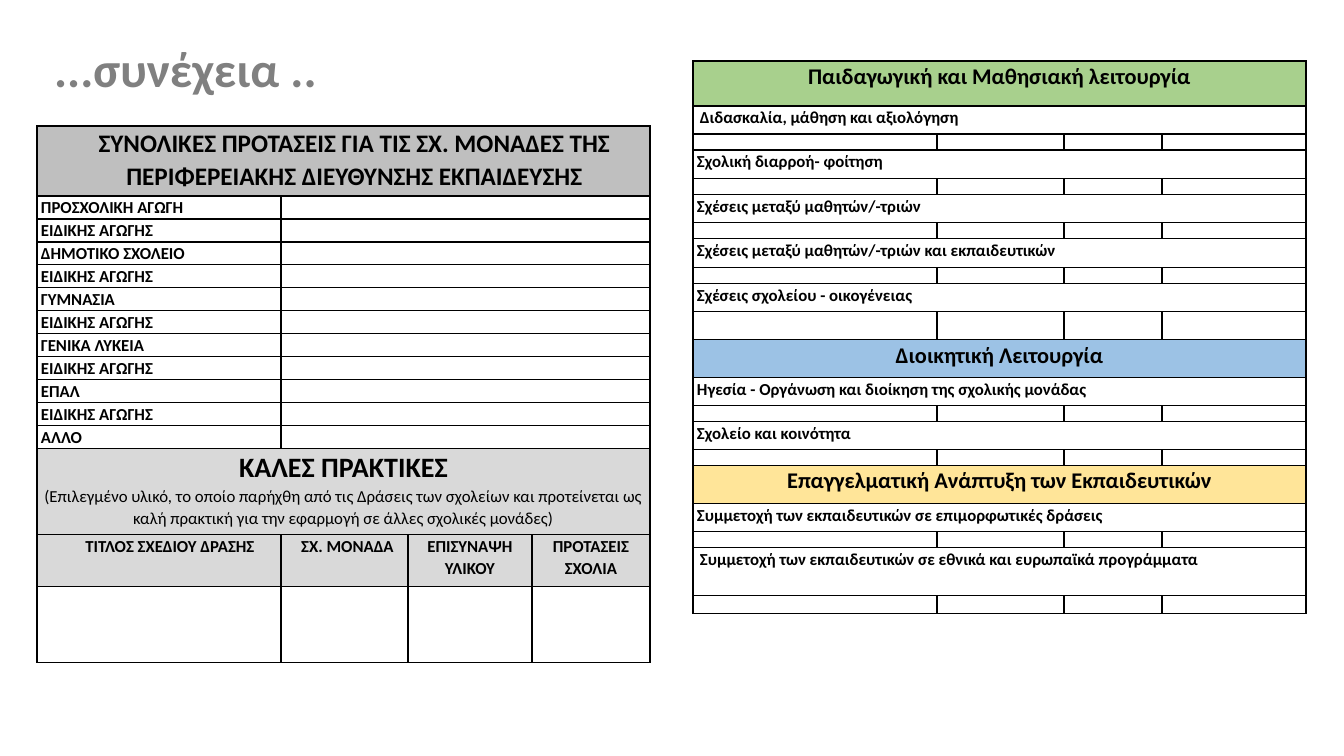
import lxml.etree
import pptx
import pptx.dml.color
import pptx.enum.text
import pptx.oxml.ns
import pptx.util

PX = 914400 / 100.8
RGB = pptx.dml.color.RGBColor
BLACK = RGB(0x00, 0x00, 0x00)
WHITE = RGB(0xFF, 0xFF, 0xFF)
TITLE_GRAY = RGB(0x80, 0x80, 0x80)
HEADER_GRAY = RGB(0xBF, 0xBF, 0xBF)
PRACTICE_GRAY = RGB(0xD9, 0xD9, 0xD9)
GREEN = RGB(0xA8, 0xD0, 0x8D)
BLUE = RGB(0x9C, 0xC2, 0xE5)
YELLOW = RGB(0xFF, 0xE5, 0x99)
CENTER = pptx.enum.text.PP_ALIGN.CENTER
LEFT = pptx.enum.text.PP_ALIGN.LEFT

SPECIAL = "ΕΙΔΙΚΗΣ ΑΓΩΓΗΣ"
SCHOOL_TYPES = ["ΠΡΟΣΧΟΛΙΚΗ ΑΓΩΓΗ", SPECIAL, "ΔΗΜΟΤΙΚΟ ΣΧΟΛΕΙΟ", SPECIAL, "ΓΥΜΝΑΣΙΑ", SPECIAL,
                "ΓΕΝΙΚΑ ΛΥΚΕΙΑ", SPECIAL, "ΕΠΑΛ", SPECIAL, "ΑΛΛΟ"]
# heading, indent
PRACTICE_COLUMNS = [("ΤΙΤΛΟΣ ΣΧΕΔΙΟΥ ΔΡΑΣΗΣ", 22), ("ΣΧ. ΜΟΝΑΔΑ", 6),
                    ("ΕΠΙΣΥΝΑΨΗ ΥΛΙΚΟΥ", 0), ("ΠΡΟΤΑΣΕΙΣ ΣΧΟΛΙΑ", 0)]
# heading, fill, height, topics (text, height, height of the blank row below, indent)
FUNCTIONS = [
    ("Παιδαγωγική και Μαθησιακή λειτουργία", GREEN, 45, [
        ("Διδασκαλία, μάθηση και αξιολόγηση", 28, 16, 3),
        ("Σχολική διαρροή- φοίτηση", 29, 16, 0),
        ("Σχέσεις μεταξύ μαθητών/-τριών", 28, 16, 0),
        ("Σχέσεις μεταξύ μαθητών/-τριών και εκπαιδευτικών", 29, 16, 0),
        ("Σχέσεις σχολείου - οικογένειας", 28, 28, 0)]),
    ("Διοικητική Λειτουργία", BLUE, 38, [
        ("Ηγεσία - Οργάνωση και διοίκηση της σχολικής μονάδας", 28, 16, 0),
        ("Σχολείο και κοινότητα", 28, 16, 0)]),
    ("Επαγγελματική Ανάπτυξη των Εκπαιδευτικών", YELLOW, 38, [
        ("Συμμετοχή των εκπαιδευτικών σε επιμορφωτικές δράσεις", 28, 16, 0),
        ("Συμμετοχή των εκπαιδευτικών σε εθνικά και ευρωπαϊκά προγράμματα", 48, 18, 3)]),
]


def px(length):
    return pptx.util.Emu(round(length * PX))


def write(paragraph, text, size, align=LEFT, bold=True, color=BLACK, indent=0, spacing=1.07):
    paragraph.alignment = align
    paragraph.line_spacing = spacing
    if indent:
        paragraph._p.get_or_add_pPr().set("marL", str(px(indent)))
    run = paragraph.add_run()
    run.text = text
    run.font.name = "Calibri"
    run.font.size = pptx.util.Pt(size)
    run.font.bold = bold
    run.font.color.rgb = color


def fill_cell(cell, color):
    cell.fill.solid()
    cell.fill.fore_color.rgb = color


def add_borders(cell):
    properties = cell._tc.get_or_add_tcPr()
    qn = pptx.oxml.ns.qn
    for position, side in enumerate(("a:lnL", "a:lnR", "a:lnT", "a:lnB")):
        line = lxml.etree.Element(qn(side), w=str(pptx.util.Pt(1)))
        solid = lxml.etree.SubElement(line, qn("a:solidFill"))
        lxml.etree.SubElement(solid, qn("a:srgbClr"), val=str(BLACK))
        properties.insert(position, line)


def add_grid(slide, left, top, widths, heights):
    """Add an empty white table with black borders and compact cells."""
    table = slide.shapes.add_table(len(heights), len(widths), px(left), px(top),
                                   px(sum(widths)), px(sum(heights))).table
    table.first_row = table.horz_banding = False
    for column, width in zip(table.columns, widths):
        column.width = px(width)
    for row, height in zip(table.rows, heights):
        row.height = px(height)
    for cell in table.iter_cells():
        fill_cell(cell, WHITE)
        add_borders(cell)
        cell.margin_left = cell.margin_right = px(4)
        cell.margin_top = cell.margin_bottom = 0
        # An empty cell takes its minimum height from the end-of-paragraph size.
        end = cell.text_frame.paragraphs[0]._p.get_or_add_endParaRPr()
        end.set("sz", "800")
    return table


def merge_row(table, row, first=0):
    cell = table.cell(row, first)
    cell.merge(table.cell(row, len(table.columns) - 1))
    return cell


def add_title(slide, left, top, width, height):
    title = slide.shapes.title
    title.left, title.top, title.width, title.height = map(px, (left, top, width, height))
    frame = title.text_frame
    frame.word_wrap = True
    frame.vertical_anchor = pptx.enum.text.MSO_ANCHOR.MIDDLE
    write(frame.paragraphs[0], "...συνέχεια ..", 35, CENTER, color=TITLE_GRAY, spacing=0.9)


def add_proposals(slide, left, top):
    heights = [70] + [23] * len(SCHOOL_TYPES) + [86, 52, 76]
    table = add_grid(slide, left, top, [244, 127, 124, 118], heights)
    heading = merge_row(table, 0)
    fill_cell(heading, HEADER_GRAY)
    write(heading.text_frame.paragraphs[0],
          "ΣΥΝΟΛΙΚΕΣ ΠΡΟΤΑΣΕΙΣ ΓΙΑ ΤΙΣ ΣΧ. ΜΟΝΑΔΕΣ ΤΗΣ ΠΕΡΙΦΕΡΕΙΑΚΗΣ ΔΙΕΥΘΥΝΣΗΣ ΕΚΠΑΙΔΕΥΣΗΣ",
          18, CENTER, indent=22)
    for row, school_type in enumerate(SCHOOL_TYPES, 1):
        write(table.cell(row, 0).text_frame.paragraphs[0], school_type, 12)
        merge_row(table, row, first=1)

    practices_row = len(SCHOOL_TYPES) + 1
    practices = merge_row(table, practices_row)
    fill_cell(practices, PRACTICE_GRAY)
    write(practices.text_frame.paragraphs[0], "ΚΑΛΕΣ ΠΡΑΚΤΙΚΕΣ", 20, CENTER)
    write(practices.text_frame.add_paragraph(),
          "(Επιλεγμένο υλικό, το οποίο παρήχθη από τις Δράσεις των σχολείων και προτείνεται ως "
          "καλή πρακτική για την εφαρμογή σε άλλες σχολικές μονάδες)", 12, CENTER, bold=False)
    for column, (name, indent) in enumerate(PRACTICE_COLUMNS):
        cell = table.cell(practices_row + 1, column)
        fill_cell(cell, PRACTICE_GRAY)
        write(cell.text_frame.paragraphs[0], name, 12, CENTER, indent=indent)


def add_functions(slide, left, top):
    heights = []
    for _, _, heading_height, topics in FUNCTIONS:
        heights.append(heading_height)
        for _, topic_height, blank_height, _ in topics:
            heights += [topic_height, blank_height]
    table = add_grid(slide, left, top, [244, 127, 98, 144], heights)
    row = 0
    for name, color, _, topics in FUNCTIONS:
        heading = merge_row(table, row)
        fill_cell(heading, color)
        write(heading.text_frame.paragraphs[0], name, 16, CENTER)
        row += 1
        for topic, _, _, indent in topics:
            write(merge_row(table, row).text_frame.paragraphs[0], topic, 12, indent=indent)
            row += 2


def main():
    presentation = pptx.Presentation()
    presentation.slide_width, presentation.slide_height = px(1344), px(756)
    slide = presentation.slides.add_slide(presentation.slide_layouts[5])
    add_title(slide, 35, 14, 301, 116)
    add_functions(slide, 693, 61)
    add_proposals(slide, 37, 126)
    presentation.save("out.pptx")


if __name__ == "__main__":
    main()
